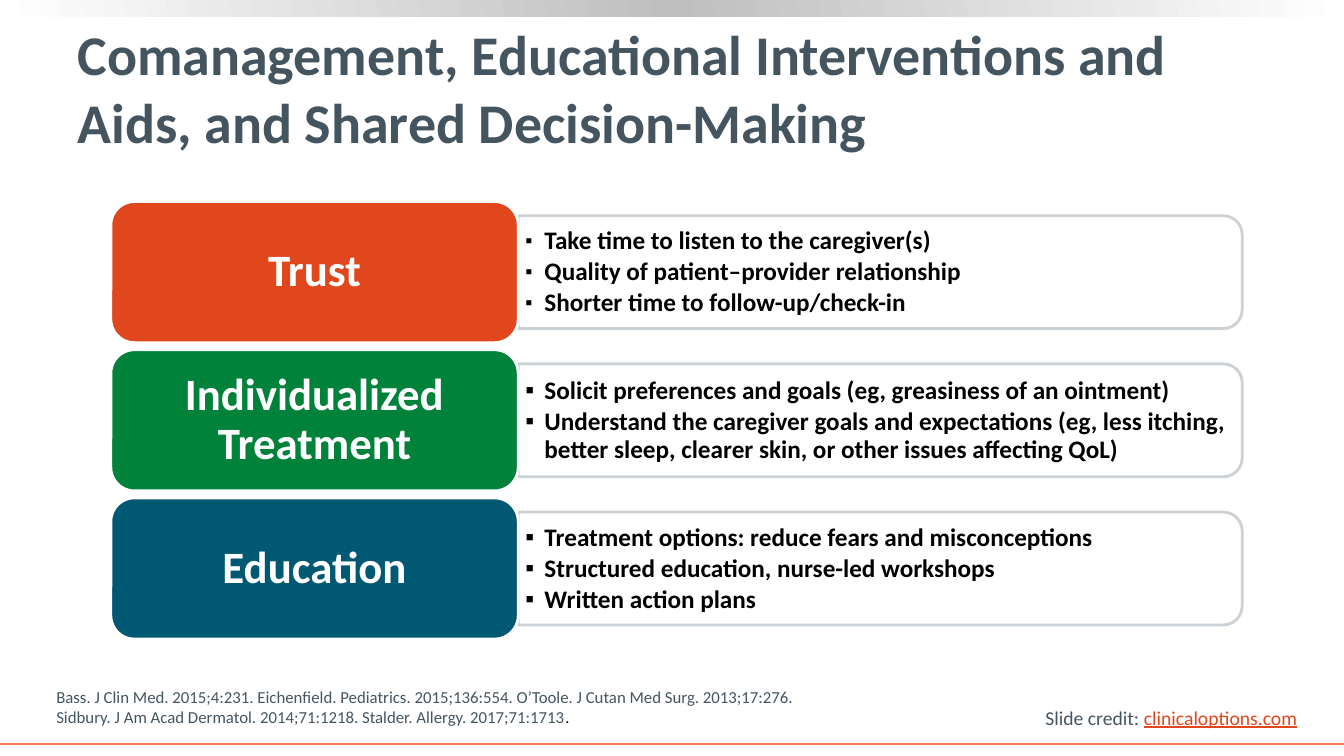
from copy import deepcopy
from dataclasses import dataclass

from lxml.etree import SubElement as Sub
from pptx import Presentation
from pptx.dml.color import RGBColor as Rgb
from pptx.enum.shapes import MSO_CONNECTOR as Conn, MSO_SHAPE as Form
from pptx.enum.text import MSO_ANCHOR as Anchor, PP_ALIGN as Align
from pptx.oxml.ns import qn
from pptx.util import Inches, Pt


@dataclass(frozen=True)
class Theme:
    font: str = "Calibri"
    slate: str = "455560"
    white: str = "FFFFFF"
    black: str = "000000"
    gray: str = "BFBFBF"
    edge: str = "CCD1D5"
    red: str = "E1471D"
    green: str = "00823B"
    blue: str = "015873"
    rule: str = "F47D55"
    title: int = 40
    card: int = 32
    body: int = 18
    credit: int = 14
    note: int = 12


def write(para, text, size, color, font="Calibri", bold=False, under=False):
    """Add text to a paragraph; each newline becomes a line break."""
    for i, part in enumerate(text.split("\n")):
        if i:
            para.add_line_break()
        run = para.add_run()
        run.text = part
        face = run.font
        face.name, face.size = font, Pt(size)
        face.bold, face.underline = bold, under
        face.color.rgb = Rgb.from_string(color)


class Deck:
    def __init__(self, theme):
        self.theme = theme
        self.prs = Presentation()
        self.prs.slide_width, self.prs.slide_height = Inches(13.33), Inches(7.5)
        self.slide = self.prs.slides.add_slide(self.prs.slide_layouts[6])

    def shape(self, form, box, fill, line=None):
        item = self.slide.shapes.add_shape(form, *map(Inches, box))
        item.shadow.inherit = False
        item.fill.solid()
        item.fill.fore_color.rgb = Rgb.from_string(fill)
        if line:
            item.line.color.rgb = Rgb.from_string(line)
            item.line.width = Pt(2)
        else:
            item.line.fill.background()
        return item

    def fade(self, box, colors, angle):
        item = self.shape(Form.RECTANGLE, box, colors[0])
        item.fill.gradient()
        item.fill.gradient_angle = angle
        stops = next(item._element.spPr.iter(qn("a:gsLst")))
        stops.append(deepcopy(stops[0]))
        for i, stop in enumerate(item.fill.gradient_stops):
            stop.color.rgb = Rgb.from_string(colors[i])
            stop.position = i / (len(colors) - 1)

    def line(self, start, end, color, width):
        item = self.slide.shapes.add_connector(
            Conn.STRAIGHT, *map(Inches, (*start, *end)))
        item.line.color.rgb = Rgb.from_string(color)
        item.line.width = Pt(width)
        Sub(item._element.spPr, qn("a:effectLst"))

    def text(self, box, anchor=Anchor.TOP, wrap=True, inset=(0.1, 0.05)):
        item = self.slide.shapes.add_textbox(*map(Inches, box))
        return self.frame(item, anchor, wrap, inset)

    def frame(self, item, anchor, wrap, inset):
        frame = item.text_frame
        frame.word_wrap, frame.vertical_anchor = wrap, anchor
        frame.margin_left = frame.margin_right = Inches(inset[0])
        frame.margin_top = frame.margin_bottom = Inches(inset[1])
        return frame

    def card(self, box, label, fill):
        item = self.shape(Form.ROUNDED_RECTANGLE, box, fill, self.theme.white)
        para = self.frame(item, Anchor.MIDDLE, True, (0.2, 0.14)).paragraphs[0]
        para.alignment, para.line_spacing = Align.CENTER, 0.9
        write(para, label, self.theme.card, self.theme.white, bold=True)

    def panel(self, left, mid, width, height):
        # Upright shape turned a quarter, so its round end faces right
        box = (left + (width - height) / 2, mid - width / 2, height, width)
        item = self.shape(Form.ROUND_2_SAME_RECTANGLE, box,
                          self.theme.white, self.theme.edge)
        item.rotation = 90

    def list(self, box, lines, mark):
        frame = self.text(box, Anchor.MIDDLE, inset=(0.07, 0.04))
        for i, line in enumerate(lines):
            para = frame.add_paragraph() if i else frame.paragraphs[0]
            props = para._p.get_or_add_pPr()
            props.set("marL", str(Inches(0.19)))
            props.set("indent", str(-Inches(0.19)))
            Sub(props, qn("a:buSzPct"), val=str(mark * 1000))
            Sub(props, qn("a:buFont"), typeface="Arial")
            Sub(props, qn("a:buChar"), char="▪")
            para.line_spacing, para.space_after = 0.9, Pt(2.7)
            write(para, line, self.theme.body, self.theme.black, bold=True)


def main():
    look = Theme()
    deck = Deck(look)

    # Top band and bottom rule
    deck.fade((0, 0, 13.33, 0.16), (look.white, look.gray, look.white), 190)
    deck.line((0, 7.38), (13.33, 7.38), look.rule, 1.5)

    # Slide credit
    para = deck.text((10.27, 6.95, 2.72, 0.34), wrap=False).paragraphs[0]
    write(para, "Slide credit: ", look.credit, look.slate)
    write(para, "clinicaloptions.com", look.credit, look.red, under=True)

    # Title
    para = deck.text((0.67, 0.26, 12.18, 1.21), Anchor.MIDDLE).paragraphs[0]
    write(para, "Comanagement, Educational Interventions and Aids, "
          "and Shared Decision-Making", look.title, look.slate, bold=True)

    # Sources
    para = deck.text((0.46, 6.76, 10.88, 0.48)).paragraphs[0]
    write(para, "Bass. J Clin Med. 2015;4:231. Eichenfield. Pediatrics. "
          "2015;136:554. O’Toole. J Cutan Med Surg. 2013;17:276. \n"
          "Sidbury. J Am Acad Dermatol. 2014;71:1218. "
          "Stalder. Allergy. 2017;71:1713", look.note, look.slate)
    write(para, ".", look.note, look.black, font="Arial")

    # Rows: label, color, bullet size in percent, points
    rows = [
        ("Trust", look.red, 80, [
            "Take time to listen to the caregiver(s)",
            "Quality of patient–provider relationship",
            "Shorter time to follow-up/check-in"]),
        ("Individualized Treatment", look.green, 100, [
            "Solicit preferences and goals (eg, greasiness of an ointment)",
            "Understand the caregiver goals and expectations (eg, less "
            "itching, better sleep, clearer skin, or other issues "
            "affecting QoL)"]),
        ("Education", look.blue, 100, [
            "Treatment options: reduce fears and misconceptions",
            "Structured education, nurse-led workshops",
            "Written action plans"]),
    ]
    left, top, wide, high, step = 1.1, 2, 4.04, 1.4, 1.47
    edge = left + wide
    for i, (label, color, mark, lines) in enumerate(rows):
        y = top + i * step
        deck.panel(edge, y + high / 2, 7.18, 1.12)
        deck.list((edge, y + 0.2, 7.12, 1.01), lines, mark)
        deck.card((left, y, wide, high), label, color)

    deck.prs.save("out.pptx")


if __name__ == "__main__":
    main()
